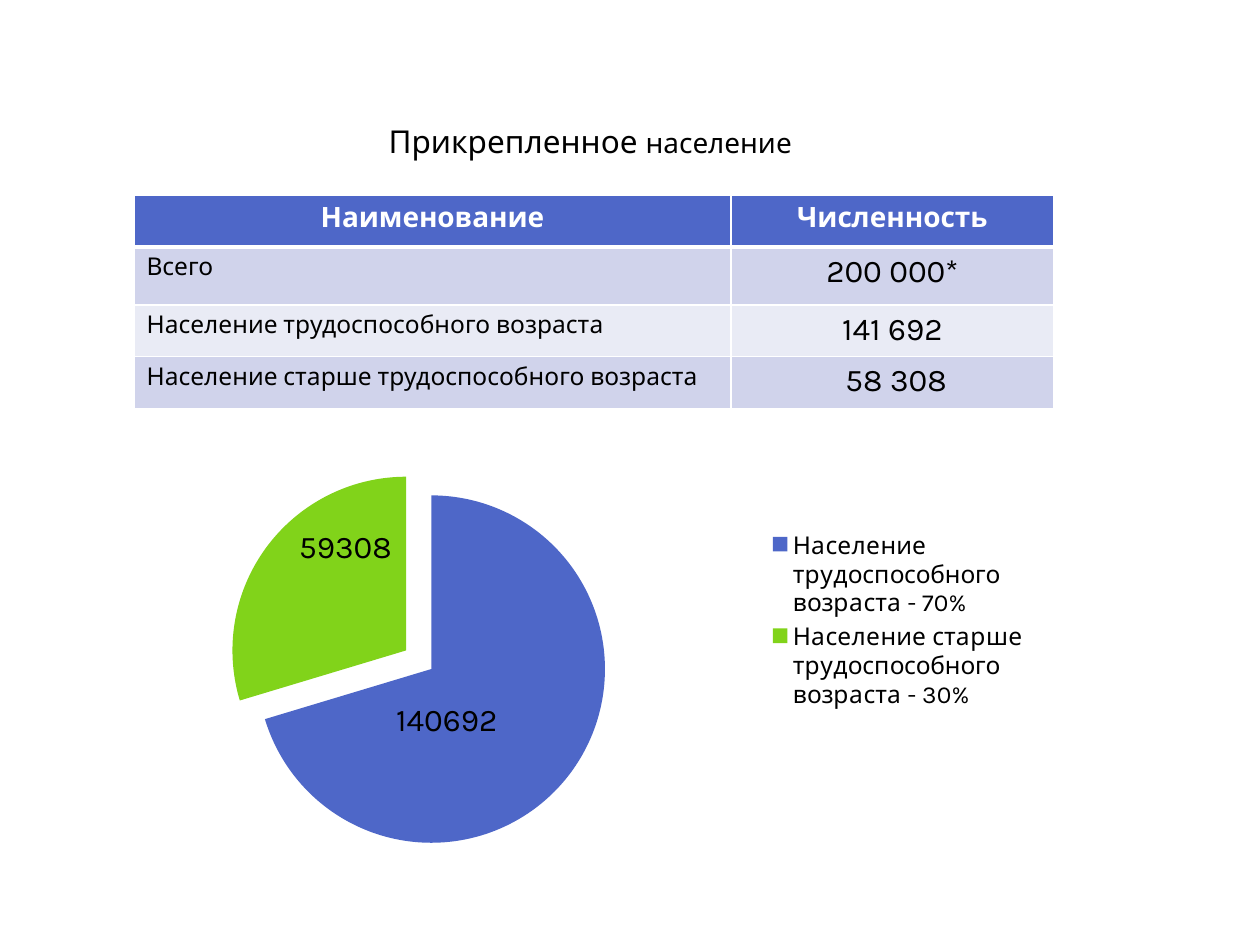
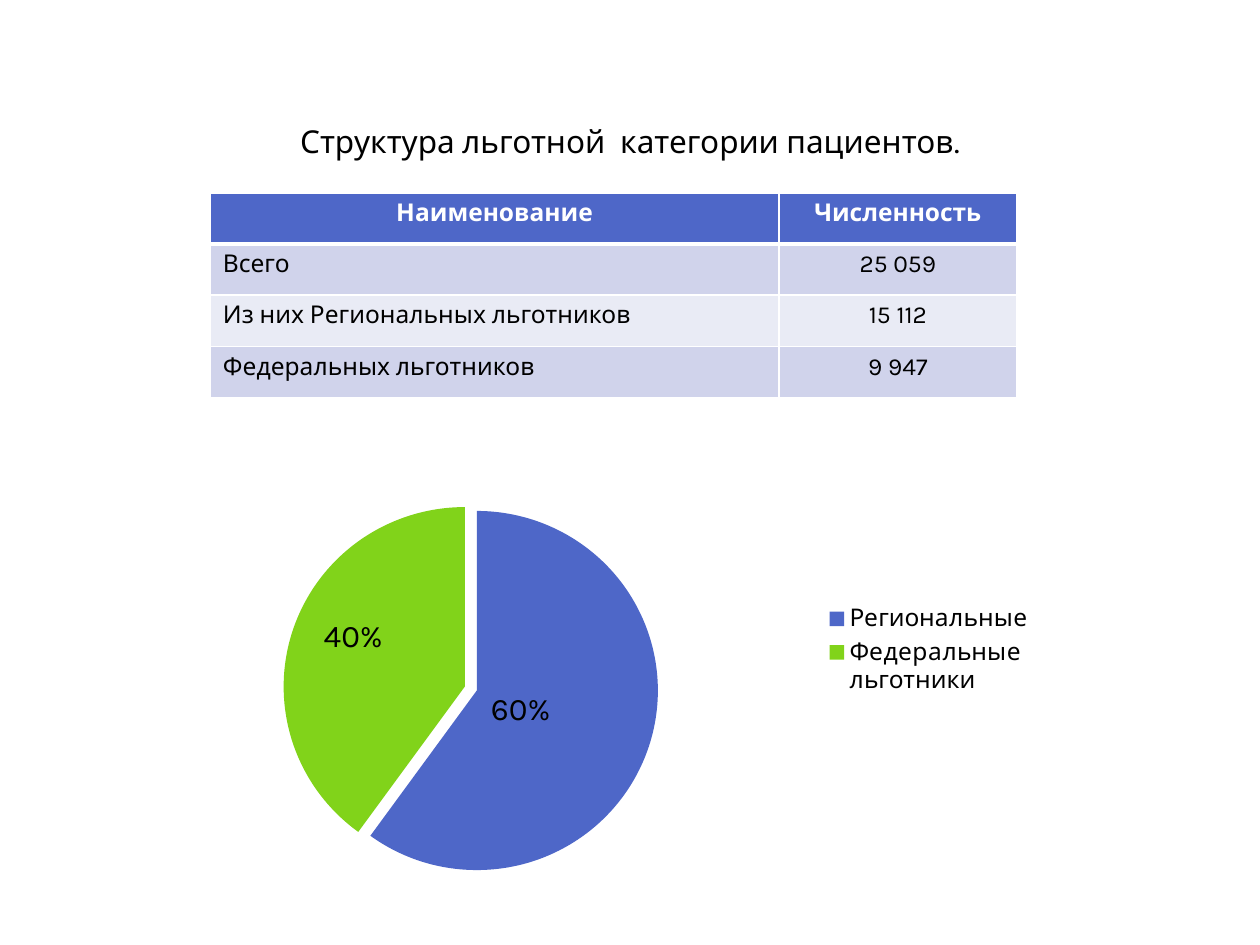
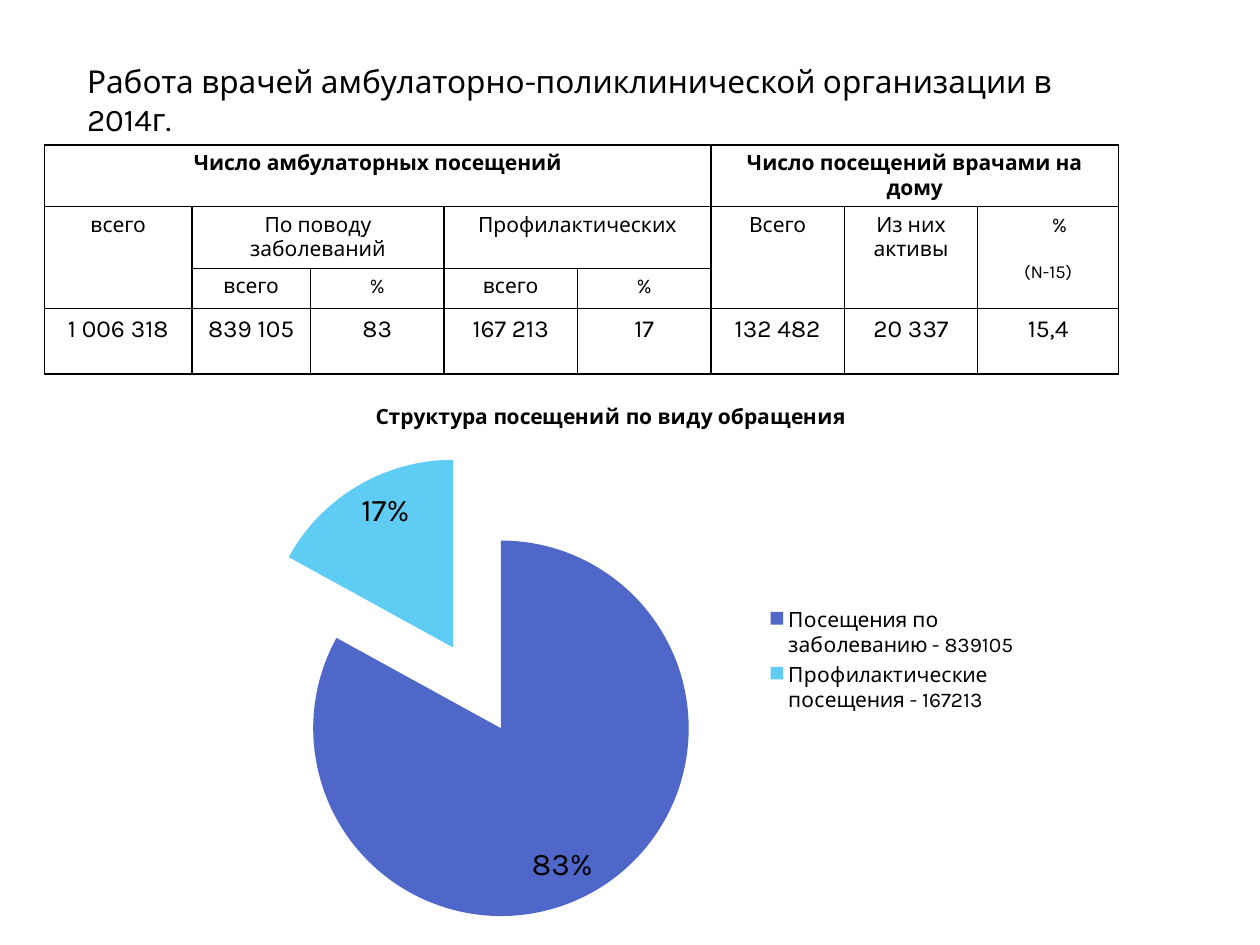
from lxml.etree import SubElement
from pptx import Presentation
from pptx.chart.data import CategoryChartData as ChartData
from pptx.dml.color import RGBColor as RGB
from pptx.enum.chart import XL_CHART_TYPE as ChartType
from pptx.enum.chart import XL_LABEL_POSITION as LabelPos
from pptx.enum.chart import XL_LEGEND_POSITION as LegendPos
from pptx.enum.text import MSO_ANCHOR as Anchor
from pptx.enum.text import MSO_AUTO_SIZE as AutoSize
from pptx.enum.text import PP_ALIGN as Align
from pptx.oxml import parse_xml
from pptx.oxml.ns import nsdecls, qn
from pptx.util import Cm, Pt

COLORS = {"black": "000000", "white": "FFFFFF", "blue": "4E67C8",
          "green": "81D31A", "sky": "5ECCF3",
          "band_dark": "D0D3EB", "band_light": "E9EBF5"}
FONT = "Karla"
VISITS = "Структура посещений по виду обращения"


def style(paragraph, size, color="black", bold=False, align=Align.CENTER):
    paragraph.alignment = align
    for run in paragraph.runs:
        run.font.name = FONT
        run.font.size = Pt(size)
        run.font.bold = bold
        run.font.color.rgb = RGB.from_string(COLORS[color])


def set_borders(cell, color, **widths):
    cell_props = cell._tc.get_or_add_tcPr()
    for place, side in enumerate("LRTB"):
        width = Pt(widths.get(side, 1))
        cell_props.insert(place, parse_xml(
            f'<a:ln{side} {nsdecls("a")} w="{width}"><a:solidFill>'
            f'<a:srgbClr val="{COLORS[color]}"/></a:solidFill></a:ln{side}>'))


prs = Presentation()
prs.slide_width, prs.slide_height = Cm(25.4), Cm(19.05)

# Slide titles: text, left, top, width, alignment
titles = [
    ("Прикрепленное население", 1.9, 2.34, 20, Align.CENTER),
    ("Структура льготной  категории пациентов.", 2.7, 2.34, 20, Align.CENTER),
    ("Работа врачей амбулаторно-поликлинической организации в 2014г.",
     1.5, 1.12, 21.6, Align.LEFT),
]
for text, left, top, width, align in titles:
    title = prs.slides.add_slide(prs.slide_layouts[5]).shapes.title
    title.left, title.top = Cm(left), Cm(top)
    title.width, title.height = Cm(width), Cm(1.02)
    frame = title.text_frame
    frame.word_wrap = True
    frame.auto_size = AutoSize.NONE
    frame.vertical_anchor = Anchor.TOP
    frame.text = text
    style(frame.paragraphs[0], 18, align=align)

# The first title ends with a smaller word
heading = prs.slides[0].shapes.title.text_frame.paragraphs[0]
heading.text = "Прикрепленное "
heading.add_run().text = "население"
style(heading, 18)
heading.runs[1].font.size = Pt(16)

# Population tables on the first two slides
populations = [
    dict(box=(2.7, 3.94), cols=(12.04, 6.5), heights=(1.04, 1.17, 1.04, 1.04),
         header_size=16, number_size=18,
         rows=[("Всего", "200 000*"),
               ("Население трудоспособного возраста", "141 692"),
               ("Население старше трудоспособного возраста", " 58 308")]),
    dict(box=(4.24, 3.89), cols=(11.46, 4.8), heights=(1.03,) * 4,
         header_size=14, number_size=14,
         rows=[("Всего", "25 059"),
               ("Из них Региональных льготников", "15 112"),
               ("Федеральных льготников", "9 947")]),
]
for slide, group in zip(prs.slides, populations):
    left, top = group["box"]
    table = slide.shapes.add_table(
        4, 2, Cm(left), Cm(top), Cm(sum(group["cols"])),
        Cm(sum(group["heights"]))).table
    table.first_row = table.horz_banding = False
    for column, width in zip(table.columns, group["cols"]):
        column.width = Cm(width)
    for r, values in enumerate([("Наименование", "Численность")] + group["rows"]):
        table.rows[r].height = Cm(group["heights"][r])
        band = "blue" if r == 0 else ("band_light", "band_dark")[r % 2]
        for c, value in enumerate(values):
            cell = table.cell(r, c)
            cell.text_frame.text = value
            paragraph = cell.text_frame.paragraphs[0]
            if r == 0:
                style(paragraph, group["header_size"], "white", bold=True)
            elif c == 0:
                style(paragraph, 14, align=Align.LEFT)
            else:
                style(paragraph, group["number_size"])
            cell.fill.solid()
            cell.fill.fore_color.rgb = RGB.from_string(COLORS[band])
            set_borders(cell, "white", B=3 if r == 0 else 1, T=3 if r == 1 else 1)

# Table of visits on the third slide
visit_cols = (2.97, 2.39) + (2.69,) * 5 + (2.84,)
visit_heights = (1.09, 0.91, 0.81, 1.32)
visit_rows = [
    ("Число амбулаторных посещений", "", "", "", "",
     "Число посещений врачами на дому", "", ""),
    ("всего", "По поводу заболеваний", "", "Профилактических", "",
     "Всего", "Из них активы", "%\n(N-15)"),
    ("", "всего", "%", "всего", "%", "", "", ""),
    ("1 006 318", "839 105", "83", "167 213", "17", "132 482", "20 337", "15,4"),
]
visits = prs.slides[2].shapes.add_table(
    4, 8, Cm(0.9), Cm(2.92), Cm(sum(visit_cols)), Cm(sum(visit_heights))).table
visits.first_row = visits.horz_banding = False
for column, width in zip(visits.columns, visit_cols):
    column.width = Cm(width)
for r, values in enumerate(visit_rows):
    visits.rows[r].height = Cm(visit_heights[r])
    for c, value in enumerate(values):
        cell = visits.cell(r, c)
        cell.fill.background()
        set_borders(cell, "black")
        cell.text_frame.text = value
        for paragraph in cell.text_frame.paragraphs:
            style(paragraph, 14 if r == 3 else 12, bold=r == 0)
            paragraph.font.size = Pt(12)
for first, last in [((0, 0), (0, 4)), ((0, 5), (0, 7)), ((1, 0), (2, 0)),
                    ((1, 1), (1, 2)), ((1, 3), (1, 4)), ((1, 5), (2, 5)),
                    ((1, 6), (2, 6)), ((1, 7), (2, 7))]:
    visits.cell(*first).merge(visits.cell(*last))

# Share of home visits with its norm below
share, norm = visits.cell(1, 7).text_frame.paragraphs
share._p.get_or_add_pPr().set("marL", str(Cm(0.45)))
norm.space_before = Pt(14)
norm.runs[0].font.size = Pt(10.5)

# Pie charts; label shifts are fractions of the chart size
pies = [
    dict(box=(2.8, 7.92, 18.2, 9.2), name="Население", explode=9,
         cats=("Население трудоспособного возраста - 70%",
               "Население старше трудоспособного возраста - 30%"),
         values=(140692, 59308), colors=("blue", "green"), legend_size=14,
         percent=False, shifts=((-0.06, 0), (0.01, -0.11))),
    dict(box=(4.1, 8.74, 17, 8.8), name="Льготники", explode_first=7,
         cats=("Региональные", "Федеральные льготники"),
         values=(60, 40), colors=("blue", "green"), legend_size=14,
         percent=True, shifts=((-0.05, -0.02), (-0.03, -0.05))),
    dict(box=(3.84, 7.67, 16.94, 11.28), name=VISITS, title=VISITS, explode=25,
         cats=("Посещения по заболеванию - 839105",
               "Профилактические посещения - 167213"),
         values=(83, 17), colors=("blue", "sky"), legend_size=12,
         percent=True, shifts=()),
]
for slide, pie in zip(prs.slides, pies):
    data = ChartData()
    data.categories = pie["cats"]
    data.add_series(pie["name"], pie["values"])
    chart = slide.shapes.add_chart(
        ChartType.PIE, *[Cm(length) for length in pie["box"]], data).chart
    chart.font.name = FONT
    chart.font.size = Pt(18)
    chart.font.color.rgb = RGB.from_string(COLORS["black"])
    chart.has_title = "title" in pie
    if chart.has_title:
        chart.chart_title.text_frame.text = pie["title"]
        style(chart.chart_title.text_frame.paragraphs[0], 12, bold=True)
    chart.has_legend = True
    chart.legend.position = LegendPos.RIGHT
    chart.legend.include_in_layout = False
    chart.legend.font.size = Pt(pie["legend_size"])
    chart.legend.font.name = FONT

    # Slices
    plot = chart.plots[0]
    plot.vary_by_categories = True
    series = plot.series[0]
    for i, color in enumerate(pie["colors"]):
        fill = series.points[i].format.fill
        fill.solid()
        fill.fore_color.rgb = RGB.from_string(COLORS[color])
    ser = series._element
    if "explode" in pie:
        ser.find(qn("c:tx")).addnext(parse_xml(
            f'<c:explosion {nsdecls("c")} val="{pie["explode"]}"/>'))
    else:
        ser.find(qn("c:dPt")).find(qn("c:spPr")).addprevious(parse_xml(
            f'<c:explosion {nsdecls("c")} val="{pie["explode_first"]}"/>'))

    # Value labels
    labels = series.data_labels
    labels.show_percentage = pie["percent"]
    labels.show_value = not pie["percent"]
    labels.number_format = "0%" if pie["percent"] else "0"
    labels.number_format_is_linked = False
    labels.position = LabelPos.INSIDE_END
    for i, shift in enumerate(pie["shifts"]):
        series.points[i].data_label.position = LabelPos.CENTER
        label = ser.findall(".//" + qn("c:dLbl"))[i]
        label.find(qn("c:showVal")).set("val", str(int(not pie["percent"])))
        label.find(qn("c:showPercent")).set("val", str(int(pie["percent"])))
        layout = parse_xml(f'<c:layout {nsdecls("c")}><c:manualLayout/></c:layout>')
        for axis, offset in zip("xy", shift):
            SubElement(layout[0], qn("c:" + axis)).set("val", str(offset))
        label.find(qn("c:idx")).addnext(layout)

    # Fixed plot area beside the legend
    if not chart.has_title:
        area = chart._chartSpace.find(".//" + qn("c:plotArea"))
        for old in area.findall(qn("c:layout")):
            area.remove(old)
        area.insert(0, parse_xml(
            f'<c:layout {nsdecls("c")}><c:manualLayout>'
            '<c:layoutTarget val="inner"/><c:xMode val="edge"/><c:yMode val="edge"/>'
            '<c:x val="0"/><c:y val="0.17"/><c:w val="0.62"/><c:h val="0.83"/>'
            '</c:manualLayout></c:layout>'))

prs.save("out.pptx")
